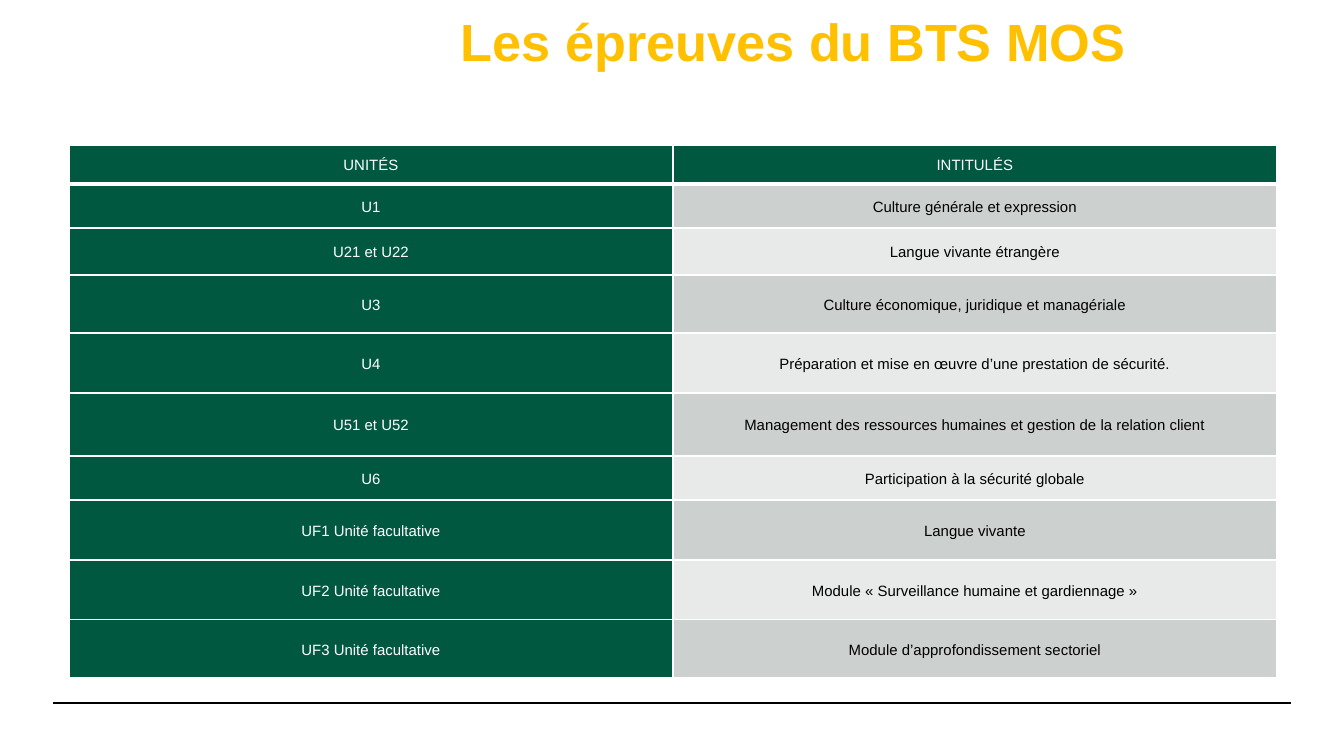
from lxml.etree import SubElement as Sub
from pptx import Presentation
from pptx.dml.color import RGBColor as RGB
from pptx.enum.shapes import MSO_CONNECTOR as Conn
from pptx.enum.text import MSO_ANCHOR as Anchor, PP_ALIGN as Align
from pptx.oxml import parse_xml
from pptx.oxml.ns import nsdecls, qn
from pptx.util import Pt

PX = 9144000 / 1344
GREEN, WHITE, BLACK = "005841", "FFFFFF", "000000"
GREYS = ["E7EAE9", "CCD1CF"]


def px(n):
    return round(n * PX)


def write(para, text, size, color, bold=False):
    run = para.add_run()
    run.text = text
    font = run.font
    font.name = "Arial"
    font.size = Pt(size)
    font.bold = bold
    font.color.rgb = RGB.from_string(color)


deck = Presentation()
deck.slide_width, deck.slide_height = px(1344), px(756)
slide = deck.slides.add_slide(deck.slide_layouts[6])

rule = slide.shapes.add_connector(Conn.STRAIGHT, px(53), px(703), px(1291), px(703))
rule.line.color.rgb = RGB.from_string(BLACK)
rule.line.width = Pt(0.8)
Sub(rule._element.spPr, qn("a:effectLst"))

title = slide.shapes.add_textbox(px(461), px(16), px(836), px(106))
frame = title.text_frame
frame.word_wrap = True
frame.margin_left = frame.margin_right = frame.margin_top = frame.margin_bottom = 0
frame.vertical_anchor = Anchor.TOP
para = frame.paragraphs[0]
para.line_spacing = 0.9
write(para, "Les épreuves du BTS MOS", 28, "FFC000", True)

rows = [
    (39, "UNITÉS", "INTITULÉS"),
    (44, "U1", "Culture générale et expression"),
    (47, "U21 et U22", "Langue vivante étrangère"),
    (58, "U3", "Culture économique, juridique et managériale"),
    (60, "U4", "Préparation et mise en œuvre d’une prestation de sécurité."),
    (63, "U51 et U52", "Management des ressources humaines et gestion de la relation client"),
    (44, "U6", "Participation à la sécurité globale"),
    (60, "UF1 Unité facultative", "Langue vivante"),
    (60, "UF2 Unité facultative", "Module « Surveillance humaine et gardiennage »"),
    (58, "UF3 Unité facultative", "Module d’approfondissement sectoriel"),
]
high = sum(row[0] for row in rows)
table = slide.shapes.add_table(len(rows), 2, px(69), px(145), px(1208), px(high)).table
for col in table.columns:
    col.width = px(604)

for r, (tall, *texts) in enumerate(rows):
    table.rows[r].height = px(tall)
    for c, text in enumerate(texts):
        cell = table.cell(r, c)
        dark = r == 0 or c == 0
        cell.fill.solid()
        cell.fill.fore_color.rgb = RGB.from_string(GREEN if dark else GREYS[r % 2])
        cell.vertical_anchor = Anchor.MIDDLE
        cell.margin_left = cell.margin_right = px(9)
        cell.margin_top = cell.margin_bottom = 0
        para = cell.text_frame.paragraphs[0]
        para.alignment = Align.CENTER
        para.line_spacing = 1.15
        write(para, text, 8, WHITE if dark else BLACK)
        props = cell._tc.get_or_add_tcPr()
        for i, side in enumerate("LRTB"):
            wide = Pt(3 if r == 0 and side == "B" else 1)
            props.insert(i, parse_xml(
                f'<a:ln{side} {nsdecls("a")} w="{wide}"><a:solidFill>'
                f'<a:srgbClr val="{WHITE}"/></a:solidFill></a:ln{side}>'))

deck.save("out.pptx")
